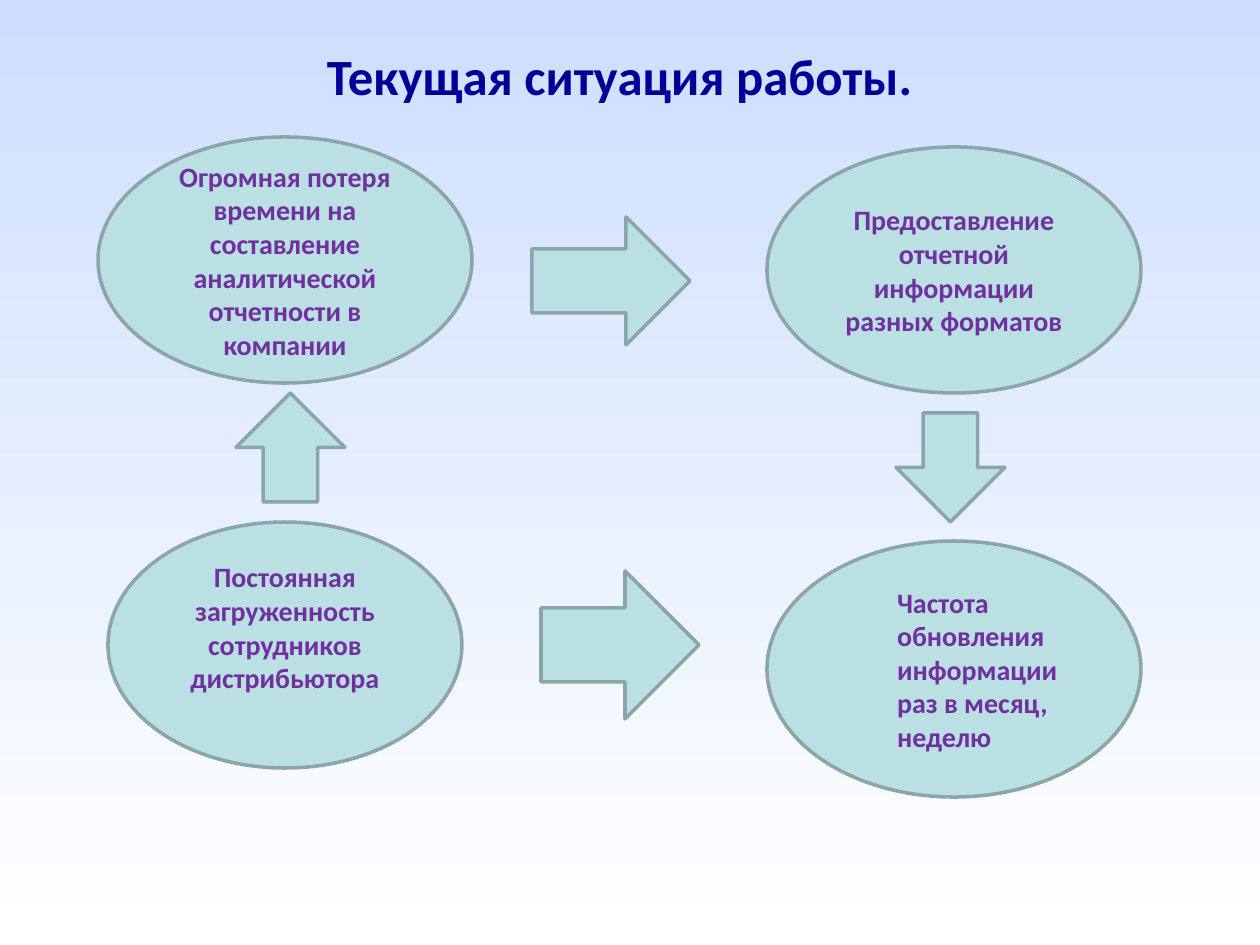
"""Build a slide showing the current work situation as four ellipses linked by arrows."""
from pptx import Presentation
from pptx.dml.color import RGBColor
from pptx.enum.shapes import MSO_SHAPE
from pptx.enum.text import MSO_ANCHOR, PP_ALIGN
from pptx.util import Emu, Pt

PX = 914400 // 126
COLORS = {"sky": "CDDEFF", "white": "FFFFFF", "fill": "BBE0E3",
          "line": "8AA6A8", "text": "7030A0", "title": "000099"}


def add_text(sp, text, size=16, color="text", align=PP_ALIGN.CENTER,
             anchor=MSO_ANCHOR.MIDDLE, indent=0, bottom=6):
    tf = sp.text_frame
    tf.word_wrap = True
    tf.vertical_anchor = anchor
    tf.margin_bottom = Emu(bottom * PX)
    p = tf.paragraphs[0]
    p.alignment = align
    if indent:
        p.level = 1
        pPr = p._p.get_or_add_pPr()
        pPr.set("marL", str(indent * PX))
        pPr.set("indent", "0")
    r = p.add_run()
    r.text = text
    r.font.name = "Calibri"
    r.font.size = Pt(size)
    r.font.bold = True
    r.font.color.rgb = RGBColor.from_string(COLORS[color])


def add_figure(kind, box):
    sp = s.shapes.add_shape(kind, *[Emu(v * PX) for v in box])
    sp.shadow.inherit = False
    sp.fill.solid()
    sp.fill.fore_color.rgb = RGBColor.from_string(COLORS["fill"])
    sp.line.color.rgb = RGBColor.from_string(COLORS["line"])
    sp.line.width = Pt(2)
    return sp


prs = Presentation()
prs.slide_width = Emu(1260 * PX)
prs.slide_height = Emu(945 * PX)
s = prs.slides.add_slide(prs.slide_layouts[6])

bg = s.background.fill
bg.gradient()
bg.gradient_angle = 270
for stop, name in zip(bg.gradient_stops, ("sky", "white")):
    stop.color.rgb = RGBColor.from_string(COLORS[name])

ellipses = [
    ((98, 137, 374, 246), "Огромная потеря времени на составление аналитической отчетности в компании", {}),
    ((767, 147, 374, 246), "Предоставление отчетной информации разных форматов", {}),
    ((108, 522, 354, 246), "Постоянная загруженность сотрудников дистрибьютора", {"bottom": 42}),
    ((767, 541, 374, 256), "Частота обновления информации раз в месяц, неделю",
     {"align": PP_ALIGN.LEFT, "indent": 63}),
]
for box, text, fmt in ellipses:
    add_text(add_figure(MSO_SHAPE.OVAL, box), text, **fmt)

arrows = [
    (MSO_SHAPE.UP_ARROW, (547, 202, 128, 158), 90),
    (MSO_SHAPE.RIGHT_ARROW, (541, 571, 158, 148), 0),
    (MSO_SHAPE.UP_ARROW, (236, 393, 109, 109), 0),
    (MSO_SHAPE.DOWN_ARROW, (896, 413, 109, 109), 0),
]
for kind, box, angle in arrows:
    add_figure(kind, box).rotation = angle

title = s.shapes.add_textbox(*[Emu(v * PX) for v in (29, 39, 1182, 74)])
add_text(title, "Текущая ситуация работы.", size=29, color="title", anchor=MSO_ANCHOR.TOP)

prs.save("out.pptx")
